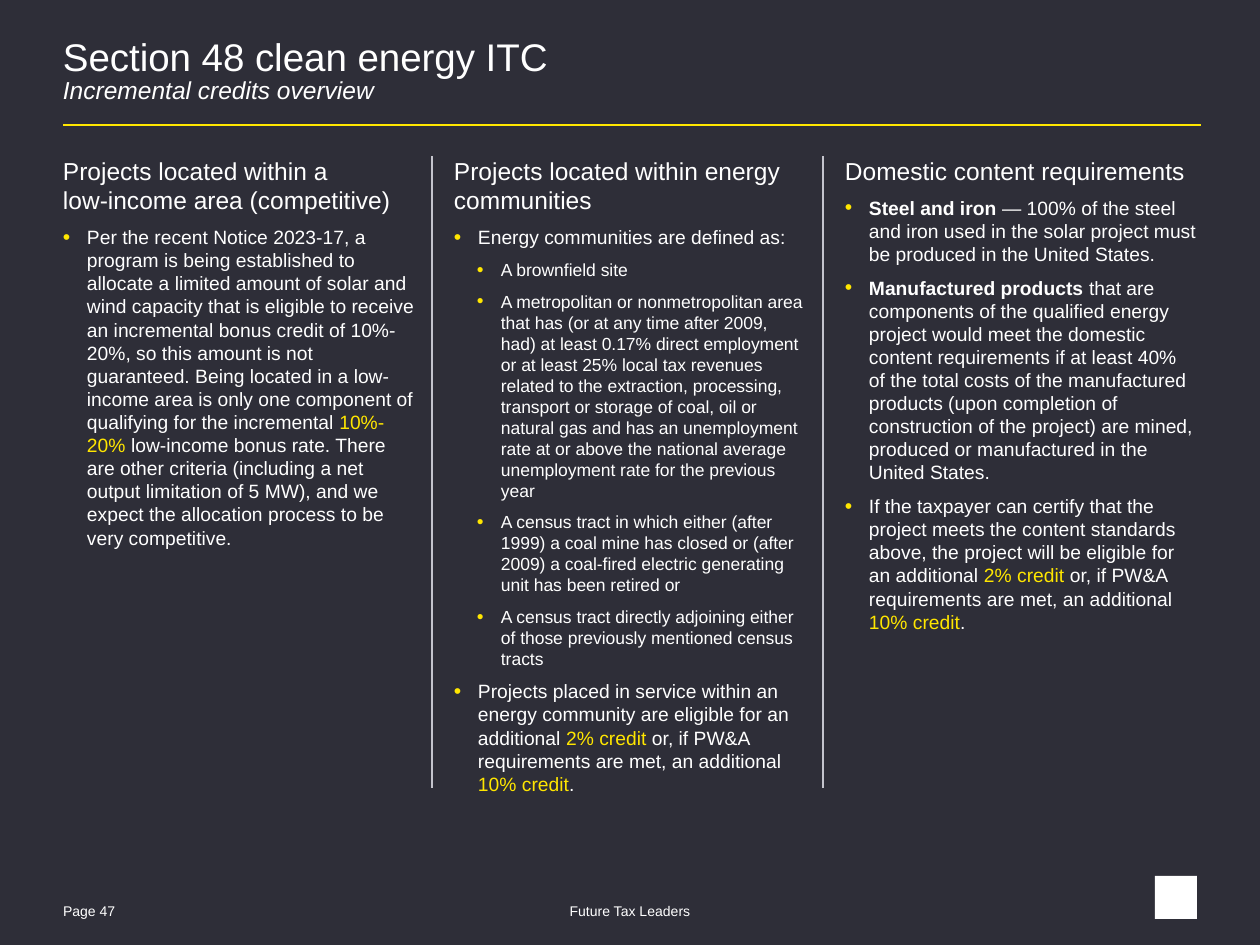
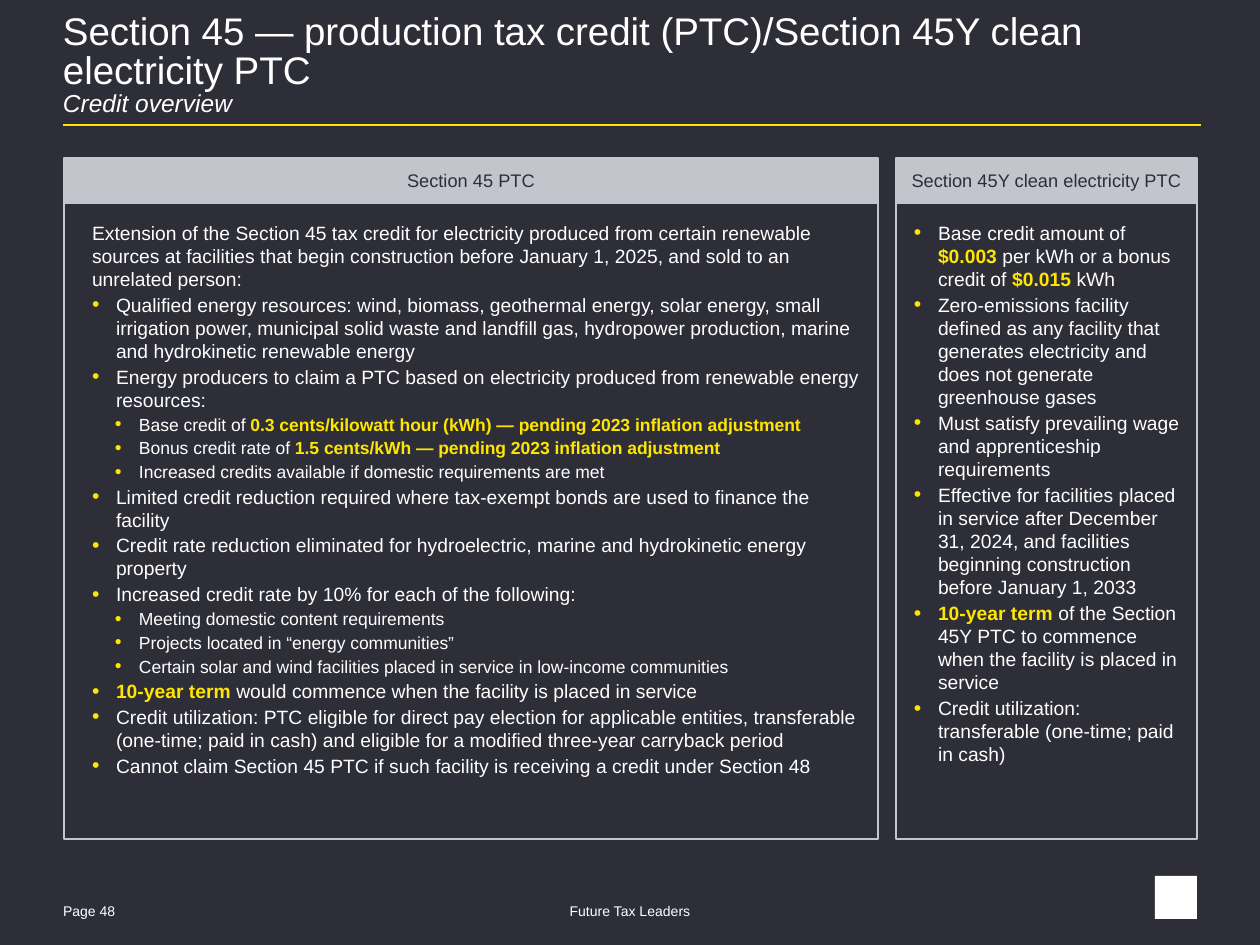
from pptx import Presentation
from pptx.dml.color import RGBColor
from pptx.enum.shapes import MSO_CONNECTOR, MSO_SHAPE
from pptx.enum.text import MSO_ANCHOR as Anchor, PP_ALIGN as Align
from pptx.oxml.ns import qn
from pptx.util import Emu, Pt
from lxml.etree import SubElement

COLORS = {"night": "2E2E38", "white": "FFFFFF", "yellow": "FFE600", "silver": "C4C4CD"}
FONT = "Arial"
PX_PER_INCH = 126
MARGIN = 63
HANG = 24
# level: (left indent in px, text size in pt)
LEVELS = {1: (24, 11), 2: (47, 10)}


def px(length):
    return Emu(round(length * 914400 / PX_PER_INCH))


def rgb(name):
    return RGBColor.from_string(COLORS[name])


# Shared drawing helpers

def style_run(run, size, color="white", bold=False, italic=False):
    font = run.font
    font.name, font.size = FONT, Pt(size)
    font.bold, font.italic = bold, italic
    font.color.rgb = rgb(color)


def set_insets(frame, horizontal, vertical):
    frame.margin_left = frame.margin_right = px(horizontal)
    frame.margin_top = frame.margin_bottom = px(vertical)


def add_text_frame(slide, box, insets=(0, 0)):
    frame = slide.shapes.add_textbox(*map(px, box)).text_frame
    frame.word_wrap = True
    set_insets(frame, *insets)
    return frame


def add_line(slide, start, end, color, width):
    line = slide.shapes.add_connector(MSO_CONNECTOR.STRAIGHT, *map(px, start + end))
    line.line.color.rgb = rgb(color)
    line.line.width = Pt(width)
    SubElement(line._element.spPr, qn("a:effectLst"))


def add_rect(slide, box, fill=None, outline=None):
    rect = slide.shapes.add_shape(MSO_SHAPE.RECTANGLE, *map(px, box))
    rect.shadow.inherit = False
    if fill:
        rect.fill.solid()
        rect.fill.fore_color.rgb = rgb(fill)
    else:
        rect.fill.background()
    if outline:
        rect.line.color.rgb = rgb(outline)
        rect.line.width = Pt(1.5)
    else:
        rect.line.fill.background()
    return rect


def add_bullet(paragraph, level):
    props = paragraph._p.get_or_add_pPr()
    props.set("marL", str(px(LEVELS[level][0])))
    props.set("indent", str(-px(HANG)))
    color = SubElement(props, qn("a:buClr"))
    SubElement(color, qn("a:srgbClr"), val=COLORS["yellow"])
    SubElement(props, qn("a:buSzPct"), val="110000")
    SubElement(props, qn("a:buFont"), typeface=FONT)
    SubElement(props, qn("a:buChar"), char="•")


def write_runs(paragraph, parts, size):
    """Each part is plain text or a (text, style words) pair."""
    for part in parts:
        text, style = (part, "") if isinstance(part, str) else part
        run = paragraph.add_run()
        run.text = text
        style_run(run, size, "yellow" if "yellow" in style else "white", "bold" in style)


def write_bullets(frame, items, before=0, after=0):
    """Append (level, part, part, ...) items below the lead paragraph, if there is one."""
    for level, *parts in items:
        first = not frame.paragraphs[0].runs
        paragraph = frame.paragraphs[0] if first else frame.add_paragraph()
        add_bullet(paragraph, level)
        if before and not first:
            paragraph.space_before = Pt(before)
        if after:
            paragraph.space_after = Pt(after)
        write_runs(paragraph, parts, LEVELS[level][1])


# Regions

def add_footer(slide, page):
    labels = [((MARGIN, 898, 92, 25), f"Page {page}", Align.LEFT),
              ((388, 898, 484, 25), "Future Tax Leaders", Align.CENTER)]
    for box, label, align in labels:
        frame = add_text_frame(slide, box)
        frame.margin_top = px(5)
        frame.text = label
        frame.paragraphs[0].alignment = align
        style_run(frame.paragraphs[0].runs[0], 8)
    # Plain corner mark
    add_rect(slide, (1155, 876, 42, 43), "white")


def add_base_slide(prs, page, title, subtitle, title_top):
    slide = prs.slides.add_slide(prs.slide_layouts[6])
    slide.background.fill.solid()
    slide.background.fill.fore_color.rgb = rgb("night")
    add_footer(slide, page)
    add_line(slide, (MARGIN, 125), (1201, 125), "yellow", 1.5)
    heading = add_text_frame(slide, (MARGIN, title_top, 1134, 82)).paragraphs[0]
    heading.text = f"{title}\n{subtitle}"
    heading.line_spacing = 0.85
    title_run, subtitle_run = heading.runs
    style_run(title_run, 22)
    style_run(subtitle_run, 14, italic=True)
    return slide


def add_column(slide, box, heading, items):
    frame = add_text_frame(slide, box)
    lead = frame.paragraphs[0]
    lead.text = heading
    lead.space_after = Pt(6)
    for run in lead.runs:
        style_run(run, 14)
    for line_break in lead._p.findall(qn("a:br")):
        SubElement(line_break, qn("a:rPr"), sz="1400")
    write_bullets(frame, items, after=6)


def add_panel(slide, box, heading, items, pad, lead=None):
    left, top, width, height = box
    header_height = 45
    add_rect(slide, (left, top + header_height, width, height - header_height), outline="silver")
    header = add_rect(slide, (left, top, width, header_height), "silver", "silver").text_frame
    set_insets(header, 0, 0)
    header.vertical_anchor = Anchor.MIDDLE
    header.text = heading
    header.paragraphs[0].alignment = Align.CENTER
    style_run(header.paragraphs[0].runs[0], 10.4, "night")

    body = add_text_frame(slide, (left + pad, top + 57, width - pad, height - 90), (13, 6))
    if lead:
        write_runs(body.paragraphs[0], [lead], 11)
    write_bullets(body, items, before=1.5)


# Content

PROJECT_COLUMNS = [
    ("Projects located within a\nlow-income area (competitive)", [
        (1, "Per the recent Notice 2023-17, a program is being established to allocate a limited "
            "amount of solar and wind capacity that is eligible to receive an incremental bonus "
            "credit of 10%-20%, so this amount is not guaranteed. Being located in a low-income "
            "area is only one component of qualifying for the incremental ",
         ("10%-20% ", "yellow"),
         "low-income bonus rate. There are other criteria (including a net output limitation of "
         "5 MW), and we expect the allocation process to be very competitive."),
    ]),
    ("Projects located within energy communities", [
        (1, "Energy communities are defined as:"),
        (2, "A brownfield site"),
        (2, "A metropolitan or nonmetropolitan area that has (or at any time after 2009, had) at "
            "least 0.17% direct employment or at least 25% local tax revenues related to the "
            "extraction, processing, transport or storage of coal, oil or natural gas and has an "
            "unemployment rate at or above the national average unemployment rate for the "
            "previous year"),
        (2, "A census tract in which either (after 1999) a coal mine has closed or (after 2009) "
            "a coal-fired electric generating unit has been retired or"),
        (2, "A census tract directly adjoining either of those previously mentioned census tracts"),
        (1, "Projects placed in service within an energy community are eligible for an additional ",
         ("2% credit", "yellow"), " or, if PW&A requirements are met, an additional ",
         ("10% credit", "yellow"), "."),
    ]),
    ("Domestic content requirements", [
        (1, ("Steel and iron ", "bold"),
         "— 100% of the steel and iron used in the solar project must be produced in the "
         "United States."),
        (1, ("Manufactured products ", "bold"),
         "that are components of the qualified energy project would meet the domestic content "
         "requirements if at least 40% of the total costs of the manufactured products (upon "
         "completion of construction of the project) are mined, produced or manufactured in the "
         "United States."),
        (1, "If the taxpayer can certify that the project meets the content standards above, the "
            "project will be eligible for an additional ",
         ("2% credit ", "yellow"), "or, if PW&A requirements are met, an additional ",
         ("10% credit", "yellow"), "."),
    ]),
]

PTC_LEAD = ("Extension of the Section 45 tax credit for electricity produced from certain "
            "renewable sources at facilities that begin construction before January 1, 2025, "
            "and sold to an unrelated person:")
PTC_ITEMS = [
    (1, "Qualified energy resources: wind, biomass, geothermal energy, solar energy, small "
        "irrigation power, municipal solid waste and landfill gas, hydropower production, marine "
        "and hydrokinetic renewable energy"),
    (1, "Energy producers to claim a PTC based on electricity produced from renewable energy "
        "resources:"),
    (2, "Base credit of ",
     ("0.3 cents/kilowatt hour (kWh) — pending 2023 inflation adjustment", "yellow bold")),
    (2, "Bonus credit rate of ",
     ("1.5 cents/kWh — pending 2023 inflation adjustment", "yellow bold")),
    (2, "Increased credits available if domestic requirements are met"),
    (1, "Limited credit reduction required where tax-exempt bonds are used to finance the facility"),
    (1, "Credit rate reduction eliminated for hydroelectric, marine and hydrokinetic energy "
        "property"),
    (1, "Increased credit rate by 10% for each of the following:"),
    (2, "Meeting domestic content requirements"),
    (2, "Projects located in “energy communities”"),
    (2, "Certain solar and wind facilities placed in service in low-income communities"),
    (1, ("10-year term ", "yellow bold"), "would commence when the facility is placed in service"),
    (1, "Credit utilization: PTC eligible for direct pay election for applicable entities, "
        "transferable (one-time; paid in cash) and eligible for a modified three-year carryback "
        "period"),
    (1, "Cannot claim Section 45 PTC if such facility is receiving a credit under Section 48"),
]
CLEAN_PTC_ITEMS = [
    (1, "Base credit amount of ", ("$0.003 ", "yellow bold"), "per kWh or a bonus credit of ",
     ("$0.015 ", "yellow bold"), "kWh"),
    (1, "Zero-emissions facility defined as any facility that generates electricity and does not "
        "generate greenhouse gases"),
    (1, "Must satisfy prevailing wage and apprenticeship requirements"),
    (1, "Effective for facilities placed in service after December 31, 2024, and facilities "
        "beginning construction before January 1, 2033"),
    (1, ("10-year term ", "yellow bold"),
     "of the Section 45Y PTC to commence when the facility is placed in service"),
    (1, "Credit utilization: transferable (one-time; paid in cash)"),
]


# Slides

def build_itc_slide(prs):
    slide = add_base_slide(prs, 47, "Section 48 clean energy ITC",
                           "Incremental credits overview", 40)
    top, step, width = 156, 391, 353
    for index, (heading, items) in enumerate(PROJECT_COLUMNS):
        left = MARGIN + index * step
        add_column(slide, (left, top, width, 632), heading, items)
        if index:
            divider = left - 22
            add_line(slide, (divider, top), (divider, 788), "silver", 0.75)


def build_ptc_slide(prs):
    slide = add_base_slide(
        prs, 48, "Section 45 — production tax credit (PTC)/Section 45Y clean electricity PTC",
        "Credit overview", 14)
    top, height = 158, 681
    add_panel(slide, (64, top, 814, height), "Section 45 PTC", PTC_ITEMS, 15, PTC_LEAD)
    add_panel(slide, (896, top, 301, height), "Section 45Y clean electricity PTC",
              CLEAN_PTC_ITEMS, 5)


def main():
    prs = Presentation()
    prs.slide_width, prs.slide_height = px(1260), px(945)
    build_itc_slide(prs)
    build_ptc_slide(prs)
    prs.save("out.pptx")


if __name__ == "__main__":
    main()
